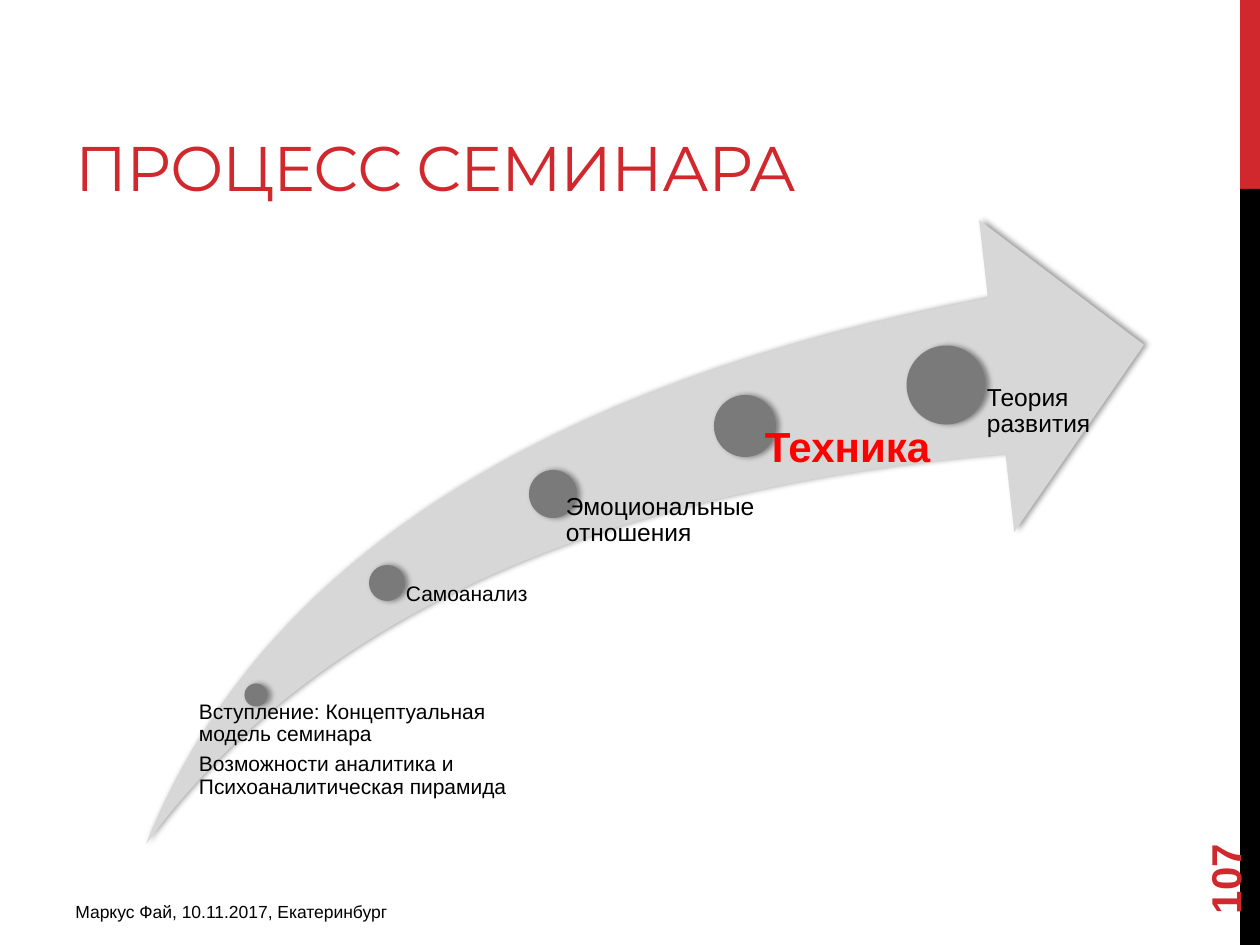
import pptx
import pptx.util
import pptx.dml.color
import pptx.enum.shapes
import pptx.enum.text
import pptx.oxml
import pptx.oxml.ns
from dataclasses import dataclass

SCALE = 914400 / 126
SHAPES = pptx.enum.shapes.MSO_SHAPE
ANCHOR = pptx.enum.text.MSO_ANCHOR


@dataclass(frozen=True)
class Theme:
    red: str = "D1282E"
    black: str = "000000"
    bright: str = "FF0000"
    arrow: str = "D7D7D7"
    dot: str = "7A7A7A"
    heading_font: str = "Montserrat"
    body_font: str = "Arial"
    title: int = 36
    strong: int = 24
    large: int = 14
    normal: int = 12
    small: int = 10


THEME = Theme()
TITLE = "ПРОЦЕСС СЕМИНАРА"
FOOTER = "Маркус Фай, 10.11.2017, Екатеринбург"
PAGE_NUMBER = "107"
BARS = [(0, 189, THEME.red), (189, 756, THEME.black)]
ARROW_BOX = (146, 220, 998, 624)
ARROW_BOTTOM = ARROW_BOX[1] + ARROW_BOX[3]
STAGES = [
    dict(center=(256, 695), diameter=23, left=186, top=701, width=364, inset=13,
         lines=["Вступление: Концептуальная модель семинара",
                "Возможности аналитика и Психоаналитическая пирамида"]),
    dict(center=(387, 583), diameter=36, left=387, top=583, width=165, inset=19,
         lines=["Самоанализ"]),
    dict(center=(553, 494), diameter=48, left=541, top=494, width=217, inset=25,
         lines=["Эмоциональные отношения"], size=THEME.large),
    dict(center=(745, 426), diameter=62, left=732, top=426, width=227, inset=33,
         lines=["Техника"], size=THEME.strong, color=THEME.bright, bold=True),
    dict(center=(946, 385), diameter=79, left=945, top=385, width=199, inset=42,
         lines=["Теория развития"], size=THEME.large),
]


def px(value):
    return pptx.util.Emu(round(value * SCALE))


def rgb(value):
    return pptx.dml.color.RGBColor.from_string(value)


def add_filled(slide, kind, box, color, shadow=False):
    shape = slide.shapes.add_shape(kind, *map(px, box))
    shape.fill.solid()
    shape.fill.fore_color.rgb = rgb(color)
    shape.line.fill.background()
    shape.shadow.inherit = False
    if shadow:
        effects = shape._element.spPr.find(pptx.oxml.ns.qn("a:effectLst"))
        effects.append(pptx.oxml.parse_xml(
            f'<a:outerShdw {pptx.oxml.ns.nsdecls("a")} blurRad="39000" dist="23000" '
            f'dir="0" rotWithShape="0"><a:srgbClr val="{THEME.black}">'
            '<a:alpha val="40000"/></a:srgbClr></a:outerShdw>'))
    return shape


def add_text(slide, box, lines, size=THEME.normal, color=THEME.black,
             font=THEME.body_font, bold=False, anchor=ANCHOR.TOP, insets=None,
             line_spacing=None, after=0, tracking=None, rotation=0):
    shape = slide.shapes.add_textbox(*map(px, box))
    shape.rotation = rotation
    frame = shape.text_frame
    frame.word_wrap = True
    frame.vertical_anchor = anchor
    if insets:
        (frame.margin_left, frame.margin_top,
         frame.margin_right, frame.margin_bottom) = map(px, insets)
    for index, line in enumerate(lines):
        paragraph = frame.add_paragraph() if index else frame.paragraphs[0]
        paragraph.line_spacing = line_spacing
        paragraph.space_after = pptx.util.Pt(size * after)
        run = paragraph.add_run()
        run.text = line
        run.font.size = pptx.util.Pt(size)
        run.font.name = font
        run.font.bold = bold
        run.font.color.rgb = rgb(color)
        if tracking:
            run._r.get_or_add_rPr().set("spc", str(round(tracking * 100)))
    return shape


def add_stage(slide, center, diameter, left, top, width, inset, lines, **style):
    x, y = center
    add_filled(slide, SHAPES.OVAL,
               (x - diameter / 2, y - diameter / 2, diameter, diameter),
               THEME.dot, shadow=True)
    add_text(slide, (left, top, width, ARROW_BOTTOM - top), lines,
             insets=(inset, 0, 0, 0), line_spacing=0.9, after=0.35, **style)


def main():
    presentation = pptx.Presentation()
    presentation.slide_width = px(1260)
    presentation.slide_height = px(945)
    slide = presentation.slides.add_slide(presentation.slide_layouts[6])

    for top, height, color in BARS:
        add_filled(slide, SHAPES.RECTANGLE, (1240, top, 20, height), color)
    add_text(slide, (63, 21, 798, 189), [TITLE], size=THEME.title, color=THEME.red,
             font=THEME.heading_font, anchor=ANCHOR.BOTTOM, tracking=-0.6)

    arrow = add_filled(slide, SHAPES.SWOOSH_ARROW, ARROW_BOX, THEME.arrow, shadow=True)
    arrow.adjustments[0] = 0.25
    arrow.adjustments[1] = 0.25
    for stage in STAGES:
        add_stage(slide, **stage)

    add_text(slide, (63, 895, 473, 39), [FOOTER], size=THEME.small)
    add_text(slide, (1134, 811, 181, 50), [PAGE_NUMBER], size=THEME.strong,
             color=THEME.red, bold=True, anchor=ANCHOR.MIDDLE, rotation=270)
    presentation.save("out.pptx")


if __name__ == "__main__":
    main()
